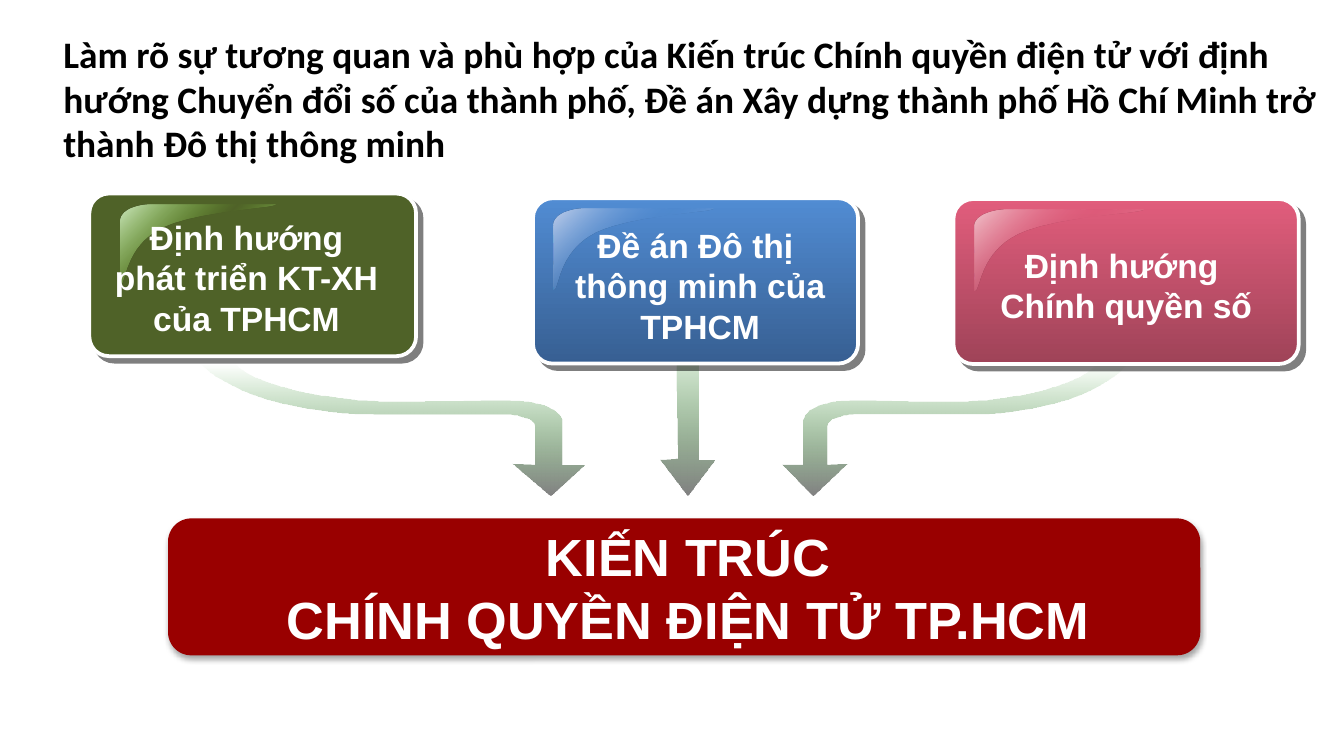
import pptx
import pptx.util
import pptx.dml.color
import pptx.enum.shapes
import pptx.enum.text
import pptx.oxml
import pptx.oxml.ns
from lxml import etree

Pt = pptx.util.Pt
qn = pptx.oxml.ns.qn

THEME = {
    "heading_font": "Calibri", "body_font": "Arial",
    "heading_size": 20, "card_size": 18, "banner_size": 28,
    "dark": "000000", "light": "FFFFFF", "banner": "990000",
    "arrow": [(0, "329A2A", 0), (100, "808080", 100)],
}

TITLE = ("Làm rõ sự tương quan và phù hợp của Kiến trúc Chính quyền điện tử với định "
         "hướng Chuyển đổi số của thành phố, Đề án Xây dựng thành phố Hồ Chí Minh trở "
         "thành Đô thị thông minh")
TITLE_FRAME = (26.7, 13, 689.8, 79.9)

CARDS = [
    {"lines": ["Định hướng phát triển KT-XH của TPHCM"],
     "frame": (47.9, 103.7, 175, 87.1), "label": (54, 112.6, 156.2, 72.7),
     "fill": [(0, "4F6228", 100)],
     "shine": ("CEE8C1", "80CB35"), "shine_frame": (64.8, 109.6, 84.2, 43.9)},
    {"lines": ["Đề án Đô thị ", "thông minh của TPHCM"],
     "frame": (285.5, 106.2, 174.2, 88.6), "label": (300.2, 116.9, 149.8, 72.7),
     "fill": [(0, "518CD3", 100), (100, "375F92", 100)],
     "shine": ("C4D1EB", "518CD3"), "shine_frame": (296.6, 111.8, 87.1, 44.6)},
    {"lines": ["Định hướng \vChính quyền số"],
     "frame": (510.8, 106.6, 185, 88.4), "label": (513.4, 127.7, 180, 51.1),
     "fill": [(0, "E15D7C", 100), (100, "9F4358", 100)],
     "shine": ("F1C6CD", "E15D7C"), "shine_frame": (522.1, 112.5, 92.2, 44.2)},
]

BANNER = {"lines": ["KIẾN TRÚC", "CHÍNH QUYỀN ĐIỆN TỬ TP.HCM"],
          "frame": (90, 277.7, 553, 73.4), "label": (102.2, 277.2, 532.8, 74.9)}

CURVED_ARROW = [
    (0, 0), (0, 0, 0.12, 0.41, 0.52, 0.38), (0.65, 0.38, 0.78, 0.38, 0.78, 0.38),
    (0.78, 0.38, 0.87, 0.38, 0.87, 0.47), (0.87, 0.61, 0.87, 0.76, 0.87, 0.76),
    (0.81, 0.75), (0.91, 1), (1, 0.76), (0.94, 0.76),
    (0.94, 0.76, 0.94, 0.59, 0.94, 0.42), (0.93, 0.3, 0.84, 0.28, 0.84, 0.28),
    (0.75, 0.26, 0.64, 0.29, 0.46, 0.28), (0.15, 0.23, 0.09, 0, 0.09, 0),
]
STRAIGHT_ARROW = [(0.28, 0.01), (0.32, 0.78), (0, 0.79), (0.5, 1),
                  (1, 0.79), (0.7, 0.79), (0.7, 0)]
SHINE = [(0.2, 0), (0.09, 0, 0, 0.08, 0, 0.2), (0, 0.97),
         (0.04, 0.99, 0.02, 0.51, 0.27, 0.28), (0.51, 0.07, 0.99, 0.05, 0.98, 0)]

ARROWS = [
    (CURVED_ARROW, (108, 195.1, 205.2, 70.6)),
    (STRAIGHT_ARROW, (353.8, 173.2, 28.8, 92.2)),
    (CURVED_ARROW, (603.4, 195.1, -184.3, 70.6)),
]


def rgb(value):
    return pptx.dml.color.RGBColor.from_string(value)


def add_color(parent, value, opacity):
    color = etree.SubElement(parent, qn("a:srgbClr"), val=value)
    if opacity < 100:
        etree.SubElement(color, qn("a:alpha"), val=str(opacity * 1000))


def set_fill(shape, stops, angle=90):
    if len(stops) == 1:
        shape.fill.solid()
        shape.fill.fore_color.rgb = rgb(stops[0][1])
        return
    shape.fill.background()
    properties = shape._element.spPr
    gradient = etree.Element(qn("a:gradFill"), rotWithShape="1")
    stop_list = etree.SubElement(gradient, qn("a:gsLst"))
    for position, value, opacity in stops:
        stop = etree.SubElement(stop_list, qn("a:gs"), pos=str(position * 1000))
        add_color(stop, value, opacity)
    etree.SubElement(gradient, qn("a:lin"), ang=str(angle * 60000), scaled="0")
    properties.replace(properties.find(qn("a:noFill")), gradient)


def set_shadow(shape, opacity, blur, distance, angle):
    effects = shape._element.spPr.find(qn("a:effectLst"))
    shadow = etree.SubElement(effects, qn("a:outerShdw"), blurRad=str(int(Pt(blur))),
                              dist=str(int(Pt(distance))), dir=str(angle * 60000),
                              algn="ctr", rotWithShape="0")
    add_color(shadow, THEME["dark"], opacity)


def add_outline(parent, steps, frame, stops, angle=90):
    left, top, width, height = frame
    placed = [[(Pt(left + x * width), Pt(top + y * height))
               for x, y in zip(step[::2], step[1::2])] for step in steps]
    builder = parent.shapes.build_freeform(*placed[0][0], scale=1.0)
    builder.add_line_segments([points[-1] for points in placed[1:]], close=True)
    shape = builder.convert_to_shape()
    segments = list(shape._element.iter(qn("a:lnTo")))
    for segment, points in zip(segments, placed[1:]):
        if len(points) == 3:
            curve = etree.Element(qn("a:cubicBezTo"))
            for x, y in points:
                etree.SubElement(curve, qn("a:pt"), x=str(int(x - shape.left)),
                                 y=str(int(y - shape.top)))
            segment.getparent().replace(segment, curve)
    shape.shadow.inherit = False
    set_fill(shape, stops, angle)
    shape.line.fill.background()


def add_panel(parent, frame, stops, corner, line=None):
    panel = parent.shapes.add_shape(pptx.enum.shapes.MSO_SHAPE.ROUNDED_RECTANGLE,
                                    *map(Pt, frame))
    panel.adjustments[0] = corner
    panel.shadow.inherit = False
    set_fill(panel, stops)
    if line:
        panel.line.color.rgb = rgb(line)
        panel.line.width = Pt(2)
    else:
        panel.line.fill.background()
    return panel


def write(box, lines, size, font, color, align):
    frame = box.text_frame
    frame.word_wrap = True
    frame.auto_size = pptx.enum.text.MSO_AUTO_SIZE.SHAPE_TO_FIT_TEXT
    frame.vertical_anchor = pptx.enum.text.MSO_ANCHOR.TOP
    frame.text = "\n".join(lines)
    for para in frame.paragraphs:
        para.alignment = align
        for span in para.runs:
            span.font.size = Pt(size)
            span.font.name = font
            span.font.bold = True
            span.font.color.rgb = rgb(color)


def add_label(page, item, size):
    box = page.shapes.add_textbox(*map(Pt, item["label"]))
    write(box, item["lines"], size=size, font=THEME["body_font"], color=THEME["light"],
          align=pptx.enum.text.PP_ALIGN.CENTER)


def main():
    deck = pptx.Presentation()
    deck.slide_width, deck.slide_height = Pt(720), Pt(405)
    page = deck.slides.add_slide(deck.slide_layouts[5])

    title = page.shapes.title
    title.left, title.top, title.width, title.height = map(Pt, TITLE_FRAME)
    write(title, [TITLE], size=THEME["heading_size"], font=THEME["heading_font"],
          color=THEME["dark"], align=pptx.enum.text.PP_ALIGN.LEFT)

    for steps, frame in ARROWS:
        add_outline(page, steps, frame, THEME["arrow"])

    for card in CARDS:
        group = page.shapes.add_group_shape()
        panel = add_panel(group, card["frame"], card["fill"], corner=0.12,
                          line=THEME["light"])
        set_shadow(panel, opacity=50, blur=0, distance=4.2, angle=45)
        edge, middle = card["shine"]
        add_outline(group, SHINE, card["shine_frame"],
                    [(0, edge, 100), (50, middle, 0), (100, edge, 100)], angle=45)
        add_label(page, card, THEME["card_size"])

    banner = add_panel(page, BANNER["frame"], [(0, THEME["banner"], 100)], corner=0.17)
    set_shadow(banner, opacity=35, blur=3.1, distance=1.8, angle=90)
    add_label(page, BANNER, THEME["banner_size"])

    deck.save("out.pptx")


if __name__ == "__main__":
    main()
